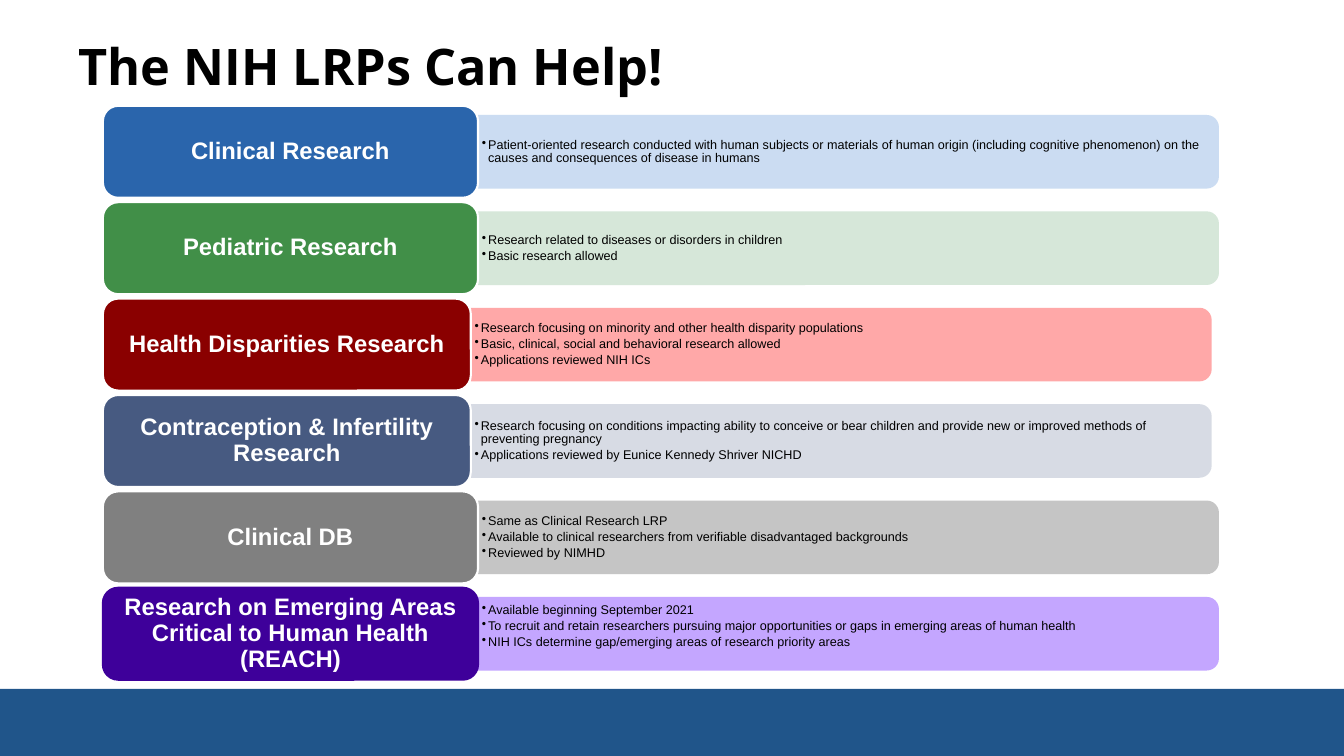
"""Build a slide listing the six loan repayment programs with a short description of each."""
import pptx
import pptx.util
import pptx.dml.color
import pptx.enum.shapes
import pptx.enum.text
import pptx.oxml.ns
import lxml.etree

Pt = pptx.util.Pt
RGB = pptx.dml.color.RGBColor.from_string
SHAPES = pptx.enum.shapes.MSO_SHAPE
ALIGN = pptx.enum.text.PP_ALIGN
MIDDLE = pptx.enum.text.MSO_ANCHOR.MIDDLE
qn = pptx.oxml.ns.qn

COLORS = {"white": "FFFFFF", "black": "000000", "footer": "20558A"}
PROGRAMS = [
    ("Clinical Research", "2A65AC", "C6D9F1", [
        "Patient-oriented research conducted with human subjects or materials of human origin "
        "(including cognitive phenomenon) on the causes and consequences of disease in humans"]),
    ("Pediatric Research", "418F48", "D2E5D5", [
        "Research related to diseases or disorders in children",
        "Basic research allowed"]),
    ("Health Disparities Research", "8A0000", "FF9F9F", [
        "Research focusing on minority and other health disparity populations",
        "Basic, clinical, social and behavioral research allowed",
        "Applications reviewed NIH ICs"]),
    ("Contraception & Infertility Research", "475A81", "D3D8E2", [
        "Research focusing on conditions impacting ability to conceive or bear children "
        "and provide new or improved methods of preventing pregnancy",
        "Applications reviewed by Eunice Kennedy Shriver NICHD"]),
    ("Clinical DB", "808080", "BFBFBF", [
        "Same as Clinical Research LRP",
        "Available to clinical researchers from verifiable disadvantaged backgrounds",
        "Reviewed by NIMHD"]),
    ("Research on Emerging Areas Critical to Human Health (REACH)", "3E009A", "C4A6FF", [
        "Available beginning September 2021",
        "To recruit and retain researchers pursuing major opportunities or gaps "
        "in emerging areas of human health",
        "NIH ICs determine gap/emerging areas of research priority areas"]),
]
NARROW_ROWS = (2, 3)
LAST_ROW = len(PROGRAMS) - 1
LABEL_LEFT, LABEL_TOP, LABEL_HEIGHT, ROW_PITCH = 73.5, 75.6, 65.7, 68.85
BAR_LENGTH, BAR_HEIGHT, DETAIL_WIDTH, DETAIL_HEIGHT = 529.2, 52.6, 527, 47.5

deck = pptx.Presentation()
deck.slide_width, deck.slide_height = Pt(960), Pt(540)
page = deck.slides.add_slide(deck.slide_layouts[6])


def add_block(kind, left, top, width, height, fill, line=None):
    block = page.shapes.add_shape(kind, Pt(left), Pt(top), Pt(width), Pt(height))
    block.shadow.inherit = False
    block.fill.solid()
    block.fill.fore_color.rgb = RGB(fill)
    if line:
        block.line.color.rgb = RGB(line)
        block.line.width = Pt(1.5)
    else:
        block.line.fill.background()
    return block


def write_text(box, lines, size, color="black", font="Arial", bold=False, align=ALIGN.LEFT,
               spacing=1.0, after=0, indent=0, bullet=None, insets=(7.2, 3.6, 7.2, 3.6)):
    frame = box.text_frame
    frame.word_wrap = True
    frame.vertical_anchor = MIDDLE
    frame.margin_left, frame.margin_top, frame.margin_right, frame.margin_bottom = map(Pt, insets)
    for number, line in enumerate(lines):
        para = frame.paragraphs[0] if number == 0 else frame.add_paragraph()
        para.alignment, para.line_spacing, para.space_after = align, spacing, Pt(after)
        properties = para._p.get_or_add_pPr()
        properties.set("marL", str(Pt(indent)))
        if bullet:
            properties.set("indent", str(-Pt(indent)))
            lxml.etree.SubElement(properties, qn("a:buChar")).set("char", bullet)
        span = para.add_run()
        span.text = line
        span.font.name, span.font.size, span.font.bold = font, Pt(size), bold
        span.font.color.rgb = RGB(COLORS[color])


add_block(SHAPES.RECTANGLE, 0, 492, 960, 48, COLORS["footer"])
title = page.shapes.add_textbox(Pt(31), Pt(10.8), Pt(696), Pt(71.3))
write_text(title, ["The NIH LRPs Can Help!"], 36, font="Open Sans", bold=True, indent=18)

for row, (name, dark, light, details) in enumerate(PROGRAMS):
    top = LABEL_TOP + row * ROW_PITCH
    middle = top + LABEL_HEIGHT / 2
    label_width = 262.8 if row in NARROW_ROWS else 268
    bar_left = LABEL_LEFT + label_width

    bar = add_block(SHAPES.ROUND_2_SAME_RECTANGLE, bar_left + (BAR_LENGTH - BAR_HEIGHT) / 2,
                    middle - BAR_LENGTH / 2, BAR_HEIGHT, BAR_LENGTH, light)
    bar.rotation = 90
    if row != LAST_ROW:
        shade = bar._element.spPr.find(qn("a:solidFill"))[0]
        lxml.etree.SubElement(shade, qn("a:alpha")).set("val", "90000")

    detail = page.shapes.add_textbox(Pt(bar_left), Pt(middle - DETAIL_HEIGHT / 2),
                                     Pt(DETAIL_WIDTH), Pt(DETAIL_HEIGHT))
    write_text(detail, details, 9, spacing=0.9, after=1.7, indent=4.5, bullet="•",
               insets=(2.7, 1.4, 2.7, 12.4 if row == LAST_ROW else 1.4))

    label = add_block(SHAPES.ROUNDED_RECTANGLE, LABEL_LEFT, top, label_width, LABEL_HEIGHT,
                      dark, dark if row == LAST_ROW else COLORS["white"])
    write_text(label, [name], 17, color="white", bold=True, align=ALIGN.CENTER, spacing=0.9,
               insets=(5, 2.5, 5, 2.5))

deck.save("out.pptx")
